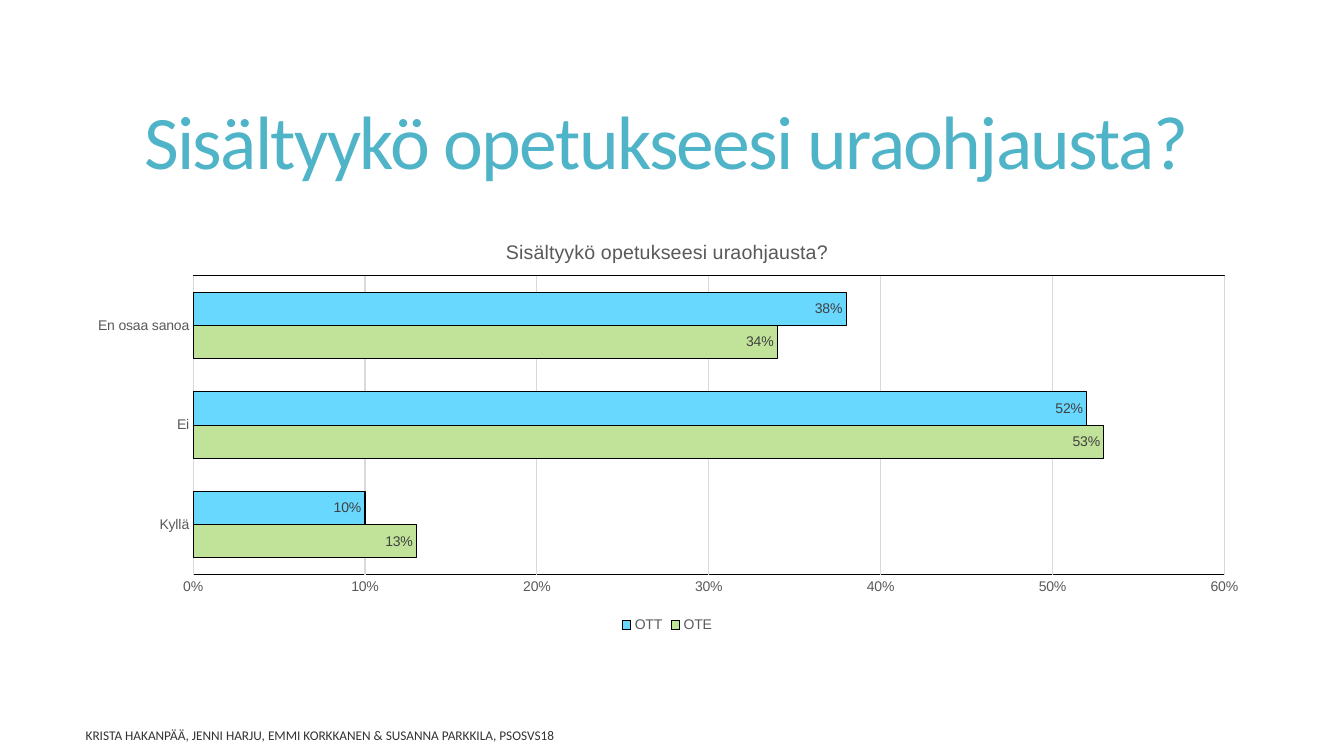
from lxml.etree import SubElement
from pptx import Presentation
from pptx.chart.data import CategoryChartData
from pptx.dml.color import RGBColor
from pptx.enum.chart import XL_CHART_TYPE, XL_LABEL_POSITION, XL_LEGEND_POSITION, XL_TICK_MARK
from pptx.enum.text import MSO_ANCHOR, PP_ALIGN
from pptx.oxml import parse_xml
from pptx.oxml.ns import nsdecls, qn
from pptx.util import Cm, Pt

TEAL = RGBColor(0x50, 0xB4, 0xC8)
BLACK = RGBColor(0x00, 0x00, 0x00)
DARK_GRAY = RGBColor(0x40, 0x40, 0x40)
GRAY = RGBColor(0x59, 0x59, 0x59)
LIGHT_GRAY = RGBColor(0xD9, 0xD9, 0xD9)
GREEN = RGBColor(0xC0, 0xE3, 0x99)
BLUE = RGBColor(0x69, 0xD8, 0xFF)
QUESTION = "Sisältyykö opetukseesi uraohjausta?"


def style_font(font, name, size, color):
    font.name = name
    font.size = Pt(size)
    font.bold = False
    font.color.rgb = color


def add_text(page, left, top, width, height, text, size, color):
    box = page.shapes.add_textbox(Cm(left), Cm(top), Cm(width), Cm(height))
    box.text_frame.word_wrap = True
    box.text_frame.vertical_anchor = MSO_ANCHOR.MIDDLE
    para = box.text_frame.paragraphs[0]
    span = para.add_run()
    span.text = text
    style_font(span.font, "Calibri", size, color)
    return para, span


deck = Presentation()
deck.slide_width = Cm(33.87)
deck.slide_height = Cm(19.05)
page = deck.slides.add_slide(deck.slide_layouts[6])

para, span = add_text(page, 1.83, 1.4, 29.92, 4.6, QUESTION, 54, TEAL)
para.alignment = PP_ALIGN.CENTER
para.line_spacing = 0.85
span.font._element.set("spc", "-120")

para, span = add_text(
    page, 1.91, 18.21, 13.97, 0.64,
    "KRISTA HAKANPÄÄ, JENNI HARJU, EMMI KORKKANEN & SUSANNA PARKKILA, PSOSVS18",
    9.5, BLACK,
)
footer_color = span.font._element.find(".//" + qn("a:srgbClr"))
SubElement(footer_color, qn("a:alpha")).set("val", "80000")

answers = CategoryChartData(number_format="0%")
answers.categories = ["Kyllä", "Ei", "En osaa sanoa"]
answers.add_series("OTE", [0.13, 0.53, 0.34])
answers.add_series("OTT", [0.10, 0.52, 0.38])
chart = page.shapes.add_chart(
    XL_CHART_TYPE.BAR_CLUSTERED, Cm(1.88), Cm(5.59), Cm(29.87), Cm(10.46), answers
).chart
style_font(chart.font, "Arial", 10, GRAY)

chart.has_title = True
span = chart.chart_title.text_frame.paragraphs[0].add_run()
span.text = QUESTION
style_font(span.font, "Arial", 14, GRAY)
chart.chart_title.include_in_layout = False

chart.has_legend = True
chart.legend.position = XL_LEGEND_POSITION.BOTTOM
chart.legend.include_in_layout = False
style_font(chart.legend.font, "Arial", 10, GRAY)

for axis in (chart.category_axis, chart.value_axis):
    axis.major_tick_mark = XL_TICK_MARK.NONE
    axis.minor_tick_mark = XL_TICK_MARK.NONE
    style_font(axis.tick_labels.font, "Arial", 10, GRAY)
chart.category_axis.format.line.color.rgb = LIGHT_GRAY
chart.category_axis.format.line.width = Pt(0.75)

value_axis = chart.value_axis
value_axis.minimum_scale = 0
value_axis.maximum_scale = 0.6
value_axis.major_unit = 0.1
value_axis.tick_labels.number_format = "0%"
value_axis.tick_labels.number_format_is_linked = False
value_axis.format.line.fill.background()
value_axis.major_gridlines.format.line.color.rgb = LIGHT_GRAY
value_axis.major_gridlines.format.line.width = Pt(0.75)

plot = chart.plots[0]
plot.gap_width = 100
plot.overlap = 0
plot.vary_by_categories = False
for series, color in zip(plot.series, (GREEN, BLUE)):
    series.format.fill.solid()
    series.format.fill.fore_color.rgb = color
    series.format.line.color.rgb = BLACK
    series.format.line.width = Pt(0.75)
    labels = series.data_labels
    labels.show_value = True
    labels.position = XL_LABEL_POSITION.INSIDE_END
    labels.number_format = "0%"
    labels.number_format_is_linked = False
    style_font(labels.font, "Arial", 10, DARK_GRAY)

plot_area = chart._chartSpace.chart.plotArea
for layout in plot_area.findall(qn("c:layout")):
    plot_area.remove(layout)
plot_area.insert(0, parse_xml(
    f'<c:layout {nsdecls("c")}><c:manualLayout><c:layoutTarget val="inner"/>'
    '<c:xMode val="edge"/><c:yMode val="edge"/><c:x val="0.1"/><c:y val="0.13"/>'
    '<c:w val="0.87"/><c:h val="0.72"/></c:manualLayout></c:layout>'
))
plot_area.append(parse_xml(
    f'<c:spPr {nsdecls("c", "a")}><a:noFill/><a:ln w="9525"><a:solidFill>'
    f'<a:srgbClr val="{BLACK}"/></a:solidFill></a:ln></c:spPr>'
))

deck.save("out.pptx")
